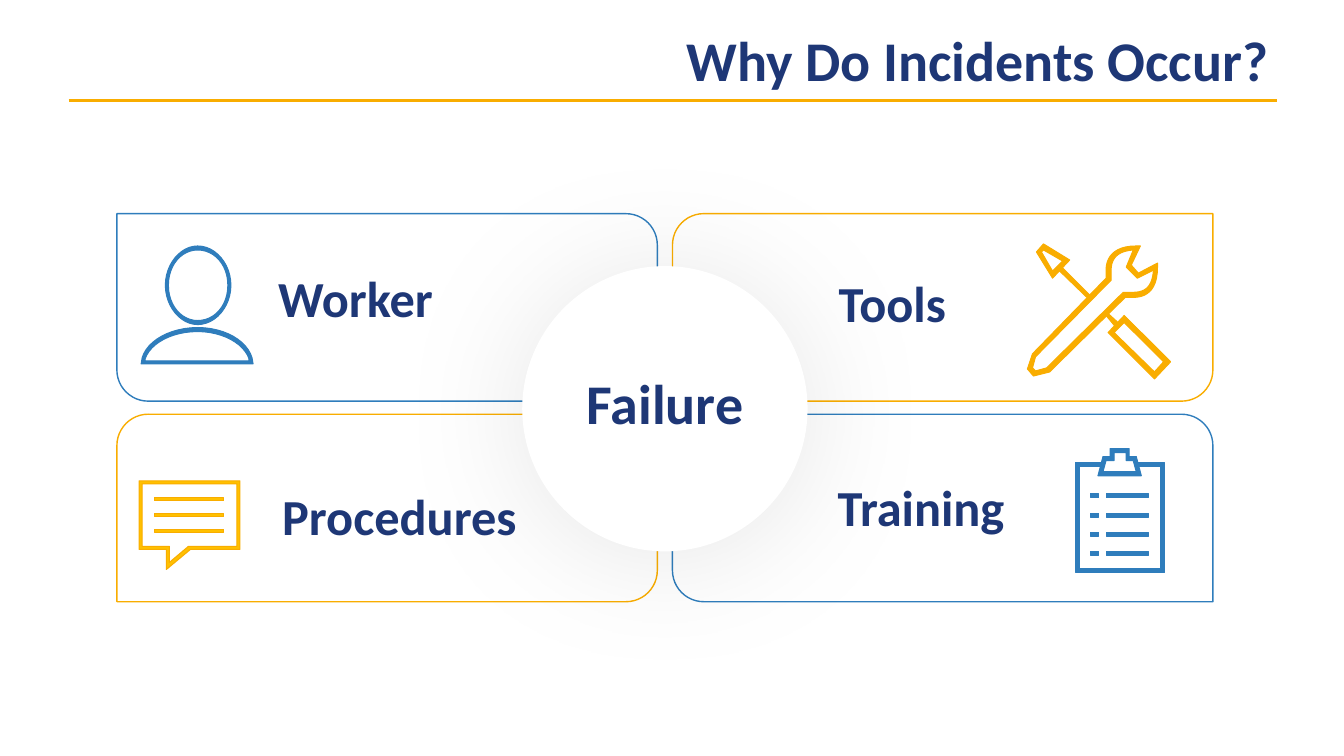
from dataclasses import dataclass
from lxml.etree import SubElement
from pptx import Presentation
from pptx.dml.color import RGBColor as RGB
from pptx.enum.shapes import MSO_CONNECTOR as CONN, MSO_SHAPE as SHAPE
from pptx.enum.text import MSO_ANCHOR as ANCHOR, PP_ALIGN as ALIGN
from pptx.oxml.ns import qn
from pptx.util import Inches, Pt


@dataclass(frozen=True)
class Theme:
    navy: RGB = RGB.from_string("1E3776")
    gold: RGB = RGB.from_string("F9AD00")
    amber: RGB = RGB.from_string("FFC000")
    blue: RGB = RGB.from_string("2F7DBC")
    white: RGB = RGB.from_string("FFFFFF")
    font: str = "Calibri"
    heading: int = 40
    label: int = 36
    rule: float = 2.25
    panel: float = 1
    icon: float = 0.75


T = Theme()
WIDTH, HEIGHT = 13.33, 7.5
TITLE, CENTER = "Why Do Incidents Occur?", "Failure"
TITLE_BOX = (0.68, 0.17, 12, 0.83)
RULE = (0.68, 12.67, 1)
GRID_LEFT, GRID_TOP = 1.16, 2.12
PANEL_W, PANEL_H = 5.36, 1.86
COL_STEP, ROW_STEP = 5.51, 1.99
ROUND = 0.167
HUB = (5.18, 2.64, 2.83, 2.83)
HUB_TEXT = (5.32, 3.61, 2.55, 0.77)
LABEL_W, LABEL_H = 3.62, 0.71

# Outlines
WORKER = [
    [[(56, 78), (39, 78, 24, 60, 24, 39), (24, 18, 39, 0, 56, 0),
      (74, 0, 89, 18, 89, 39), (89, 60, 74, 78, 56, 78)],
     [(56, 4), (40, 4, 27, 19, 27, 39), (27, 59, 40, 74, 56, 74),
      (73, 74, 86, 59, 86, 39), (86, 19, 73, 4, 56, 4)]],
    [[(56, 85), (30, 85, 9, 97, 4, 112), (4, 114), (107, 114), (107, 112),
      (102, 97, 81, 85, 56, 85)],
     [(56, 81), (83, 81, 105, 94, 110, 111), (111, 117), (0, 117), (1, 111),
      (6, 94, 29, 81, 56, 81)]],
]
BUBBLE = [
    [[(27, 88), (27, 68), (0, 68), (0, 0), (100, 0), (100, 68), (51, 68)],
     [(3, 65), (30, 65), (30, 81), (49, 65), (97, 65), (97, 3), (3, 3)]],
]
CLIPBOARD = [
    [[(88, 123), (0, 123), (0, 14), (27, 14), (27, 18), (4, 18), (4, 119),
      (84, 119), (84, 18), (61, 18), (61, 14), (88, 14)]],
    [[(65, 27), (22, 27), (27, 8), (34, 8), (34, 0), (53, 0), (53, 8), (60, 8)],
     [(27, 23), (60, 23), (57, 12), (50, 12), (50, 4), (38, 4), (38, 12), (30, 12)]],
]
TOOLS = [
    [[(88, 83), (78, 71), (80, 69), (91, 79)]],
    [[(126, 134), (80, 88), (96, 71), (142, 117)],
     [(86, 88), (126, 127), (135, 117), (96, 78)]],
    [[(25, 34), (9, 8), (16, 0), (42, 16)],
     [(14, 8), (25, 27), (35, 17), (16, 6)]],
    [[(60, 54), (30, 25), (33, 22), (62, 51)]],
    [[(6, 131), (0, 124), (5, 109), (78, 34), (78, 26), (78, 15, 84, 2, 108, 2),
      (112, 2), (103, 21), (110, 29), (129, 19), (129, 23),
      (129, 48, 116, 53, 105, 53), (97, 53), (22, 127)],
     [(5, 123), (8, 126), (19, 123), (95, 48), (105, 48),
      (118, 48, 124, 41, 125, 26), (109, 34), (98, 23), (105, 6),
      (90, 7, 83, 14, 83, 26), (83, 36), (8, 112)]],
]
BUBBLE_BARS = [(15, 17 + 15.5 * i, 69, 3) for i in range(3)]
CLIPBOARD_BARS = [(x, 45 + 19 * i, w, 4) for x, w in ((30, 42), (15, 8)) for i in range(4)]

CAUSES = [
    dict(text="Tools", col=1, row=0, color=T.gold, fill=T.gold, label=(8.22, 2.65),
         icon=(10.19, 2.42), outlines=TOOLS, bars=[]),
    dict(text="Training", col=1, row=1, color=T.blue, fill=T.blue, label=(8.21, 4.67),
         icon=(10.67, 4.45), outlines=CLIPBOARD, bars=CLIPBOARD_BARS),
    dict(text="Worker", col=0, row=0, color=T.blue, fill=T.blue, label=(2.66, 2.6),
         icon=(1.4, 2.44), outlines=WORKER, bars=[]),
    dict(text="Procedures", col=0, row=1, color=T.gold, fill=T.amber, label=(2.7, 4.76),
         icon=(1.38, 4.77), outlines=BUBBLE, bars=BUBBLE_BARS),
]


def emu(box):
    return [Inches(v) for v in box]


def paint(sp, fill=None, line=None, width=0):
    sp.shadow.inherit = False
    if fill is None:
        sp.fill.background()
    else:
        sp.fill.solid()
        sp.fill.fore_color.rgb = fill
    if line is None:
        sp.line.fill.background()
    else:
        sp.line.color.rgb = line
        sp.line.width = Pt(width)


def write(sp, text, size, align=ALIGN.LEFT, anchor=ANCHOR.TOP):
    tf = sp.text_frame
    tf.word_wrap = True
    tf.vertical_anchor = anchor
    p = tf.paragraphs[0]
    p.alignment = align
    r = p.add_run()
    r.text = text
    r.font.name, r.font.size, r.font.bold = T.font, Pt(size), True
    r.font.color.rgb = T.navy


def flatten(contour, steps=12):
    points = []
    for item in contour:
        if len(item) == 2:
            points.append(item)
            continue
        x0, y0 = points[-1]
        x1, y1, x2, y2, x3, y3 = item
        for i in range(1, steps + 1):
            t = i / steps
            a, b, c, d = (1 - t) ** 3, 3 * t * (1 - t) ** 2, 3 * t * t * (1 - t), t ** 3
            points.append((a * x0 + b * x1 + c * x2 + d * x3,
                           a * y0 + b * y1 + c * y2 + d * y3))
    return [(round(x * 100), round(y * 100)) for x, y in points]


def draw_icon(s, cause):
    shapes = s.shapes.add_group_shape().shapes
    left, top = cause["icon"]
    for x, y, w, h in cause["bars"]:
        bar = shapes.add_shape(SHAPE.RECTANGLE,
                               *emu((left + x / 100, top + y / 100, w / 100, h / 100)))
        paint(bar, cause["fill"], cause["color"], T.icon)
    for outline in cause["outlines"]:
        first, *holes = [flatten(c) for c in outline]
        fb = shapes.build_freeform(*first[0], scale=Inches(1) / 10000)
        fb.add_line_segments(first[1:], close=True)
        for hole in holes:
            fb.move_to(*hole[0])
            fb.add_line_segments(hole[1:], close=True)
        paint(fb.convert_to_shape(Inches(left), Inches(top)),
              cause["fill"], cause["color"], T.icon)


def draw_panel(s, cause):
    left = GRID_LEFT + cause["col"] * COL_STEP
    top = GRID_TOP + cause["row"] * ROW_STEP
    sp = s.shapes.add_shape(SHAPE.ROUND_2_DIAG_RECTANGLE, *emu((left, top, PANEL_W, PANEL_H)))
    main_diagonal = cause["col"] != cause["row"]
    sp.adjustments[0] = ROUND if main_diagonal else 0
    sp.adjustments[1] = 0 if main_diagonal else ROUND
    paint(sp, line=cause["color"], width=T.panel)


def draw_hub(s):
    sp = s.shapes.add_shape(SHAPE.OVAL, *emu(HUB))
    paint(sp, T.white)
    effects = sp._element.spPr.find(qn("a:effectLst"))
    shadow = SubElement(effects, qn("a:outerShdw"), blurRad=str(Pt(96)), dist=str(Pt(4)),
                        dir="5400000", algn="ctr", rotWithShape="0")
    color = SubElement(shadow, qn("a:srgbClr"), val="000000")
    SubElement(color, qn("a:alpha"), val="9000")
    write(s.shapes.add_textbox(*emu(HUB_TEXT)), CENTER, T.heading, ALIGN.CENTER)


def main():
    prs = Presentation()
    prs.slide_width, prs.slide_height = Inches(WIDTH), Inches(HEIGHT)
    s = prs.slides.add_slide(prs.slide_layouts[5])
    title = s.shapes.title
    title.left, title.top, title.width, title.height = emu(TITLE_BOX)
    write(title, TITLE, T.heading, ALIGN.RIGHT, ANCHOR.MIDDLE)
    x1, x2, y = emu(RULE)
    rule = s.shapes.add_connector(CONN.STRAIGHT, x1, y, x2, y)
    rule.line.color.rgb = T.gold
    rule.line.width = Pt(T.rule)
    SubElement(rule._element.spPr, qn("a:effectLst"))
    for cause in CAUSES:
        draw_panel(s, cause)
    draw_hub(s)
    for cause in CAUSES:
        write(s.shapes.add_textbox(*emu((*cause["label"], LABEL_W, LABEL_H))),
              cause["text"], T.label)
        draw_icon(s, cause)
    prs.save("out.pptx")


if __name__ == "__main__":
    main()
